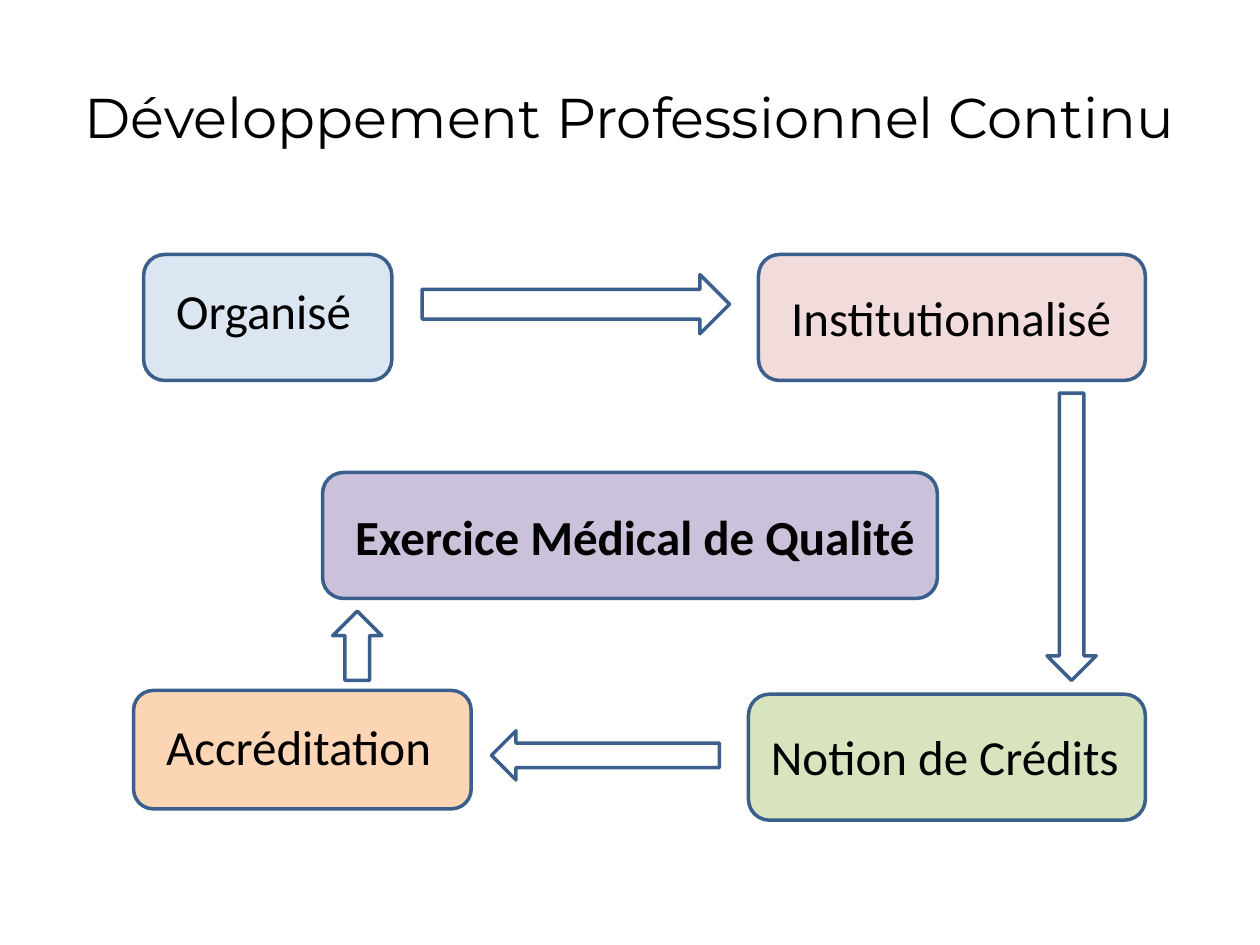
from pptx import Presentation
from pptx.dml.color import RGBColor
from pptx.enum.shapes import MSO_SHAPE
from pptx.enum.text import MSO_ANCHOR, MSO_AUTO_SIZE, PP_ALIGN
from pptx.util import Inches, Pt

COLORS = {
    "text": "000000",
    "outline": "3A5F8C",
    "arrow": "FFFFFF",
    "blue": "DCE6F2",
    "pink": "F2DCDB",
    "green": "D7E4BD",
    "orange": "FCD5B5",
    "purple": "CCC1DA",
}
COLUMNS, ROWS = 100, 75
TITLE_FONT = {"name": "Montserrat", "size": Pt(32)}
LABEL_FONT = {"name": "Calibri", "size": Pt(28)}
LABEL_HEIGHT = 5.7


class CycleSlide:
    def __init__(self, presentation):
        self.slide = presentation.slides.add_slide(presentation.slide_layouts[5])
        self.column = presentation.slide_width / COLUMNS
        self.row = presentation.slide_height / ROWS

    def area(self, left, top, width, height):
        return (round(left * self.column), round(top * self.row),
                round(width * self.column), round(height * self.row))

    def set_text(self, shape, text, font_format, frame_format, alignment):
        for name, value in frame_format.items():
            setattr(shape.text_frame, name, value)
        paragraph = shape.text_frame.paragraphs[0]
        paragraph.alignment = alignment
        run = paragraph.add_run()
        run.text = text
        for name, value in font_format.items():
            setattr(run.font, name, value)
        run.font.color.rgb = RGBColor.from_string(COLORS["text"])

    def title(self, text, area):
        shape = self.slide.shapes.title
        for name, value in zip(("left", "top", "width", "height"), self.area(*area)):
            setattr(shape, name, value)
        frame_format = {"word_wrap": True, "vertical_anchor": MSO_ANCHOR.MIDDLE}
        self.set_text(shape, text, TITLE_FONT, frame_format, PP_ALIGN.CENTER)

    def outlined(self, kind, area, color):
        shape = self.slide.shapes.add_shape(kind, *self.area(*area))
        shape.shadow.inherit = False
        if color:
            shape.fill.solid()
            shape.fill.fore_color.rgb = RGBColor.from_string(COLORS[color])
        else:
            shape.fill.background()
        shape.line.color.rgb = RGBColor.from_string(COLORS["outline"])
        shape.line.width = Pt(2)

    def step(self, text, area, color, label, bold=False):
        self.outlined(MSO_SHAPE.ROUNDED_RECTANGLE, area, color)
        shape = self.slide.shapes.add_textbox(*self.area(*label, LABEL_HEIGHT))
        frame_format = {"word_wrap": True, "auto_size": MSO_AUTO_SIZE.SHAPE_TO_FIT_TEXT}
        self.set_text(shape, text, {**LABEL_FONT, "bold": bold}, frame_format, PP_ALIGN.LEFT)

    def arrow(self, kind, area, color="arrow"):
        self.outlined(kind, area, color)


def main():
    presentation = Presentation()
    presentation.slide_width, presentation.slide_height = Inches(10), Inches(7.5)
    cycle = CycleSlide(presentation)
    cycle.title("Développement Professionnel Continu", (5, 3, 90, 12.5))

    steps = [
        ("Organisé", (11.4, 20.2, 19.7, 10), "blue", (13, 21.8, 17.3)),
        ("Institutionnalisé", (60.2, 20.2, 30.7, 10), "pink", (61.8, 22.3, 29.9)),
        ("Notion de Crédits", (59.4, 55.1, 31.5, 10), "green", (60.2, 57.2, 31.5)),
        ("Accréditation", (10.6, 54.8, 26.8, 9.4), "orange", (12.2, 56.4, 24.4)),
        ("Exercice Médical de Qualité", (25.6, 37.5, 48.8, 10), "purple",
         (27.2, 39.7, 48.8), True),
    ]
    for step in steps:
        cycle.step(*step)

    arrows = [
        (MSO_SHAPE.RIGHT_ARROW, (33.5, 21.8, 24.4, 4.7), None),
        (MSO_SHAPE.DOWN_ARROW, (83.1, 31.2, 3.9, 22.8)),
        (MSO_SHAPE.LEFT_ARROW, (39, 58, 18.1, 3.9)),
        (MSO_SHAPE.UP_ARROW, (26.4, 48.5, 3.9, 5.5)),
    ]
    for arrow in arrows:
        cycle.arrow(*arrow)

    presentation.save("out.pptx")


if __name__ == "__main__":
    main()
